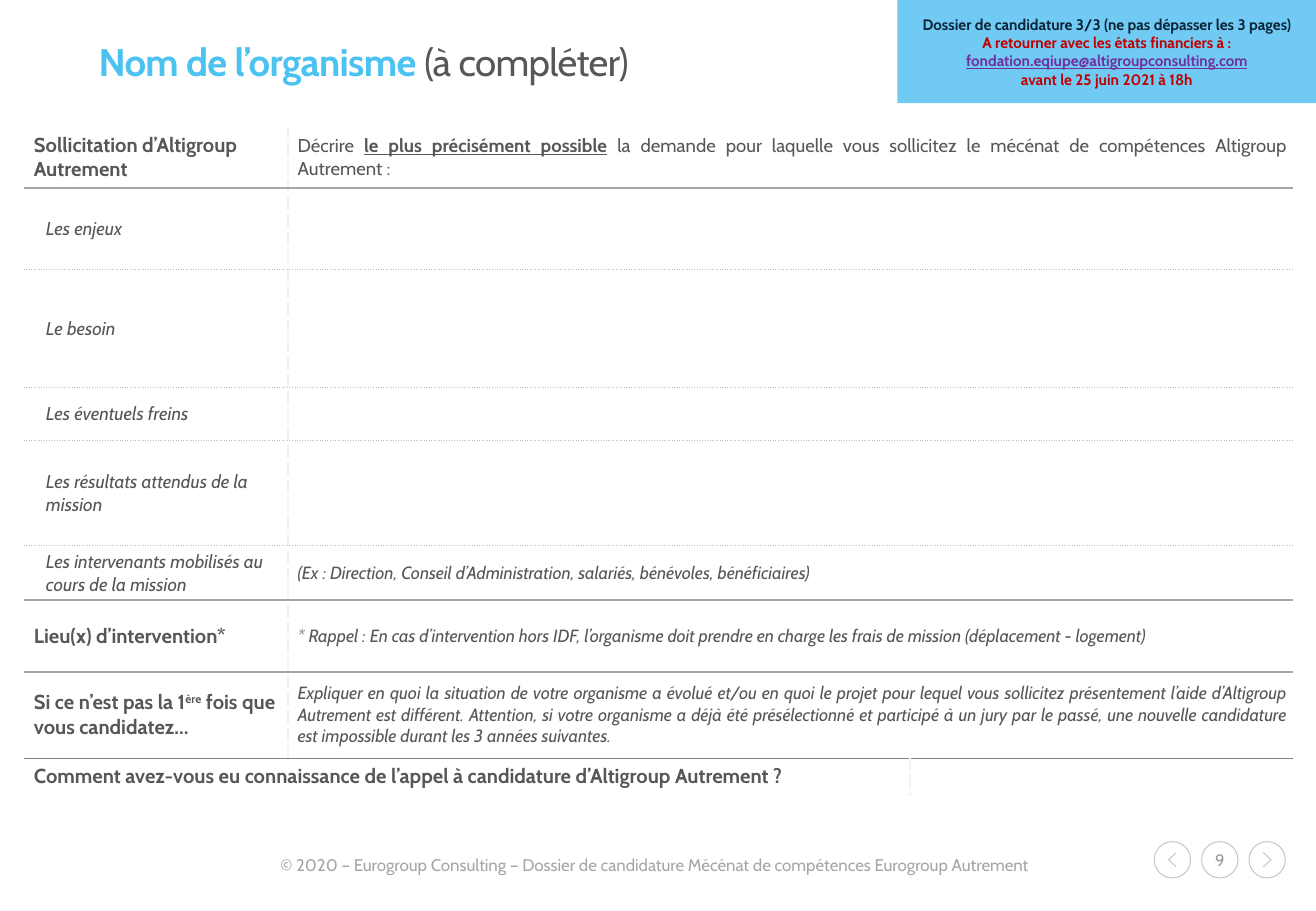
from lxml import etree
from pptx import Presentation
from pptx.dml.color import RGBColor
from pptx.enum.shapes import MSO_SHAPE
from pptx.enum.text import MSO_ANCHOR, MSO_AUTO_SIZE, PP_ALIGN
from pptx.oxml.ns import qn
from pptx.util import Cm, Pt

FONT = "Cabin"
WHITE = RGBColor(0xFF, 0xFF, 0xFF)
SKY = RGBColor(0x71, 0xCA, 0xF3)
TITLE_BLUE = RGBColor(0x4C, 0xC2, 0xF1)
INK = RGBColor(0x57, 0x56, 0x5A)
NAVY = RGBColor(0x0C, 0x24, 0x37)
RED = RGBColor(0xC0, 0x00, 0x00)
PURPLE = RGBColor(0x70, 0x30, 0xA0)
FOOTER_GREY = RGBColor(0xA6, 0xA6, 0xA6)
PAGE_GREY = RGBColor(0x9A, 0x9A, 0x9B)
BUTTON_GREY = RGBColor(0xBF, 0xBF, 0xBF)

# Table rules: colour, width in points, dash
SOLID = (RGBColor(0xA6, 0xA6, 0xA6), 1, "solid")
DOTTED = (RGBColor(0xBB, 0xBB, 0xBE), 0.75, "sysDot")
THIN = (RGBColor(0x80, 0x80, 0x80), 0.5, "solid")
DIVIDER = (RGBColor(0xF2, 0xF2, 0xF2), 1, "sysDash")

HEADING = {"size": 12, "bold": True}
SUBHEADING = {"size": 11, "italic": True}
REQUEST = {"size": 11}
HINT = {"size": 10.5, "italic": True}

# Height in cm, label style, label runs, answer style, answer runs, rule below
FORM_ROWS = [
    (1.29, HEADING, ["Sollicitation d’Altigroup Autrement"], REQUEST,
     ["Décrire ", "le plus précisément possible",
      " la demande pour laquelle vous sollicitez le mécénat de compétences "
      "Altigroup Autrement :"], SOLID),
    (1.7, SUBHEADING, ["Les enjeux"], HINT, [], DOTTED),
    (2.48, SUBHEADING, ["Le besoin"], HINT, [], DOTTED),
    (1.1, SUBHEADING, ["Les éventuels freins"], HINT, [], DOTTED),
    (2.2, SUBHEADING, ["Les résultats attendus de la mission"], HINT, [], DOTTED),
    (1.14, SUBHEADING, ["Les intervenants mobilisés au cours de la mission"], HINT,
     ["(Ex : Direction, Conseil d’Administration, salariés, bénévoles, "
      "bénéficiaires)"], SOLID),
    (1.5, HEADING, ["Lieu(x) d’intervention*"], HINT,
     ["* Rappel : En cas d’intervention hors IDF, l’organisme doit prendre en "
      "charge les frais de mission (déplacement - logement)"], SOLID),
    (1.8, HEADING, ["Si ce n’est pas la 1", "ère", " fois que vous candidatez…"], HINT,
     ["Expliquer en quoi la situation de votre organisme a évolué et/ou en quoi "
      "le projet pour lequel vous sollicitez présentement l’aide d’Altigroup "
      "Autrement est différent. Attention, si votre organisme a déjà été "
      "présélectionné et participé à un jury par le passé, une nouvelle "
      "candidature est impossible durant les 3 années suivantes."], THIN),
    (0.78, HEADING, ["Comment avez-vous eu connaissance de l’appel à candidature "
                     "d’Altigroup Autrement ?"], HINT, [], None),
]
COLUMN_WIDTHS = (5.51, 13, 8)


def set_font(paragraph, size, color, bold=False, italic=False):
    font = paragraph.font
    font.name, font.size, font.color.rgb = FONT, Pt(size), color
    font.bold, font.italic = bold, italic


def set_border(cell, side, rule):
    """Draw one side ("L", "R", "T" or "B") of a cell; call in that order."""
    color, width, dash = rule
    line = etree.SubElement(cell._tc.get_or_add_tcPr(), qn(f"a:ln{side}"),
                            w=str(Pt(width)), cap="flat", cmpd="sng")
    fill = etree.SubElement(line, qn("a:solidFill"))
    etree.SubElement(fill, qn("a:srgbClr"), val=str(color))
    etree.SubElement(line, qn("a:prstDash"), val=dash)


def fill_cell(cell, runs, style, align=PP_ALIGN.LEFT):
    paragraph = cell.text_frame.paragraphs[0]
    paragraph.alignment = align
    if style is SUBHEADING:
        paragraph._p.get_or_add_pPr().set("marL", str(Cm(0.25)))
    set_font(paragraph, color=INK, **style)
    for text in runs:
        paragraph.add_run().text = text
    if not runs:
        etree.SubElement(paragraph._p, qn("a:endParaRPr"), sz="1000")
    return paragraph


def add_title(slide, left, top, width, height):
    title = slide.shapes.title
    title.left, title.top, title.width, title.height = map(Cm, (left, top, width, height))
    frame = title.text_frame
    frame.auto_size = MSO_AUTO_SIZE.NONE
    frame.vertical_anchor = MSO_ANCHOR.MIDDLE
    frame.margin_left = frame.margin_right = frame.margin_top = frame.margin_bottom = 0
    paragraph = frame.paragraphs[0]
    paragraph.alignment = PP_ALIGN.LEFT
    paragraph.line_spacing = 0.86
    set_font(paragraph, 22.8, INK)
    for text, color, bold in (("Nom de l’organisme ", TITLE_BLUE, True),
                              ("(à compléter)", INK, False)):
        run = paragraph.add_run()
        run.text = text
        run.font.color.rgb, run.font.bold = color, bold
        run.font._element.set("spc", "-40")


def add_form(slide, left, top):
    heights = [row[0] for row in FORM_ROWS]
    table = slide.shapes.add_table(len(heights), len(COLUMN_WIDTHS), Cm(left), Cm(top),
                                   Cm(sum(COLUMN_WIDTHS)), Cm(sum(heights))).table
    table.first_row = table.horz_banding = False
    for column, width in zip(table.columns, COLUMN_WIDTHS):
        column.width = Cm(width)

    last = len(FORM_ROWS) - 1
    rule_above = None
    for index, (height, label_style, label, answer_style, answer, rule) in enumerate(FORM_ROWS):
        table.rows[index].height = Cm(height)
        cells = [table.cell(index, column) for column in range(3)]
        answer_column = 2 if index == last else 1
        for column, cell in enumerate(cells):
            sides = (("L", DIVIDER if column == answer_column else None),
                     ("R", DIVIDER if column == answer_column - 1 else None),
                     ("T", rule_above), ("B", rule))
            for side, side_rule in sides:
                if side_rule:
                    set_border(cell, side, side_rule)
            cell.fill.solid()
            cell.fill.fore_color.rgb = WHITE
            cell.vertical_anchor = MSO_ANCHOR.MIDDLE
            cell.margin_left = Cm(0.2)
            cell.margin_right = cell.margin_top = cell.margin_bottom = Cm(0.1)
        if index == last:
            cells[0].merge(cells[1])
        else:
            cells[1].merge(cells[2])
        fill_cell(cells[0], label, label_style)
        fill_cell(cells[answer_column], answer, answer_style, PP_ALIGN.JUSTIFY)
        rule_above = rule

    emphasis = table.cell(0, 1).text_frame.paragraphs[0].runs[1].font
    emphasis.bold = emphasis.underline = True
    ordinal = table.cell(7, 0).text_frame.paragraphs[0].runs[1].font
    ordinal._element.set("baseline", "30000")


def add_return_notice(slide, left, top, width, height):
    notice = slide.shapes.add_shape(MSO_SHAPE.RECTANGLE, *map(Cm, (left, top, width, height)))
    notice.shadow.inherit = False
    notice.fill.solid()
    notice.fill.fore_color.rgb = SKY
    notice.line.fill.background()
    frame = notice.text_frame
    frame.word_wrap = True
    frame.vertical_anchor = MSO_ANCHOR.MIDDLE
    lines = (("Dossier de candidature 3/3 (ne pas dépasser les 3 pages)", NAVY),
             ("A retourner avec les états financiers à :", RED),
             ("fondation.eqiupe@altigroupconsulting.com", PURPLE),
             ("avant le 25 juin 2021 à 18h", RED))
    for index, (text, color) in enumerate(lines):
        paragraph = frame.add_paragraph() if index else frame.paragraphs[0]
        paragraph.text = text
        paragraph.alignment = PP_ALIGN.CENTER
        set_font(paragraph, 9, color, bold=True)
        paragraph.font.underline = color == PURPLE


def add_copyright(slide, left, top, width, height):
    footer = slide.shapes.add_textbox(*map(Cm, (left, top, width, height)))
    footer.text_frame.word_wrap = False
    paragraph = footer.text_frame.paragraphs[0]
    paragraph.text = ("© 2020 – Eurogroup Consulting – Dossier de candidature "
                      "Mécénat de compétences Eurogroup Autrement")
    set_font(paragraph, 10, FOOTER_GREY)


def outline(shape):
    shape.shadow.inherit = False
    shape.fill.background()
    shape.line.color.rgb = BUTTON_GREY
    shape.line.width = Pt(0.5)


def add_page_buttons(slide, left, top, diameter, step):
    """Previous arrow, page number and next arrow, each in a ring."""
    for index, direction in enumerate((-1, 0, 1)):
        ring_left = left + index * step
        ring = slide.shapes.add_shape(MSO_SHAPE.OVAL, Cm(ring_left), Cm(top),
                                      Cm(diameter), Cm(diameter))
        outline(ring)
        if direction:
            x, y = ring_left + diameter / 2, top + diameter / 2
            tail, tip = Cm(x - direction * 0.08), Cm(x + direction * 0.08)
            builder = slide.shapes.build_freeform(tail, Cm(y - 0.15))
            builder.add_line_segments([(tip, Cm(y)), (tail, Cm(y + 0.15))], close=False)
            outline(builder.convert_to_shape())
        else:
            frame = ring.text_frame
            frame.word_wrap = False
            frame.vertical_anchor = MSO_ANCHOR.MIDDLE
            paragraph = frame.paragraphs[0]
            paragraph.text = "9"
            paragraph.alignment = PP_ALIGN.CENTER
            set_font(paragraph, 9.8, PAGE_GREY)


def main():
    presentation = Presentation()
    presentation.slide_width, presentation.slide_height = Cm(27.51), Cm(19.05)
    slide = presentation.slides.add_slide(presentation.slide_layouts[5])
    add_page_buttons(slide, 24.13, 17.6, 0.76, 0.99)
    add_copyright(slide, 5.61, 17.75, 16.43, 0.69)
    add_title(slide, 2.06, 0.89, 23.39, 0.94)
    add_form(slide, 0.51, 2.64)
    add_return_notice(slide, 18.76, 0, 8.75, 2.16)
    presentation.save("out.pptx")


if __name__ == "__main__":
    main()
